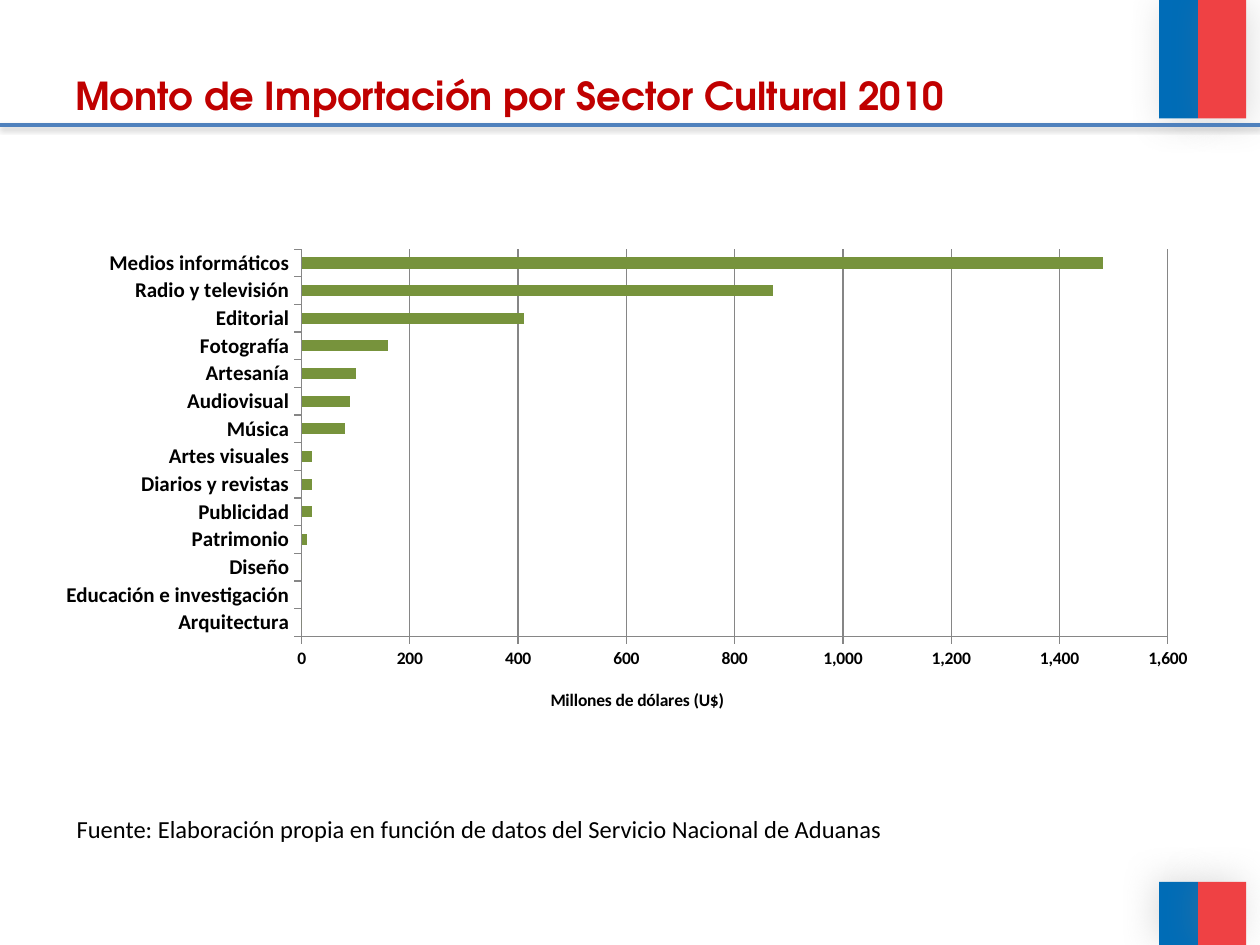
"""Build a slide with a bar chart of cultural imports by sector."""
from dataclasses import dataclass

from pptx import Presentation
from pptx import util as u
from pptx.chart import data as cd
from pptx.dml.color import RGBColor
from pptx.enum import chart as ch, shapes, text
from pptx.oxml import parse_xml
from pptx.oxml.ns import nsdecls, qn

HUES = {"blue": "006CB7", "red": "EF4144", "rule": "4F81BD", "title": "C00000",
        "text": "000000", "bar": "77933C", "grid": "868686", "shade": "808080"}
SANS = "Calibri"

SECTORS = {
    "Arquitectura": 0, "Educación e investigación": 0, "Diseño": 0,
    "Patrimonio": 10, "Publicidad": 20, "Diarios y revistas": 20,
    "Artes visuales": 20, "Música": 80, "Audiovisual": 90, "Artesanía": 100,
    "Fotografía": 160, "Editorial": 410, "Radio y televisión": 870,
    "Medios informáticos": 1480,
}


@dataclass
class Band:
    left: float
    top: float
    width: float
    height: float
    hue: str
    angle: int


@dataclass
class Label:
    left: float
    top: float
    width: float
    height: float
    words: str
    size: int
    face: str
    hue: str
    bold: bool = False
    indent: float = 0


BANDS = [Band(left, top, width, height, hue, angle)
         for top, height, angle in ((0, 67.7, 45), (504, 36, 215))
         for left, width, hue in ((662.4, 22.3, "blue"), (684.7, 27.4, "red"))]

LABELS = [
    Label(0, 37.4, 617.8, 33.8, "Monto de Importación por Sector Cultural 2010",
          22, "TeX Gyre Adventor", "title", True, 36),
    Label(36.7, 461.5, 584, 24.5,
          "Fuente: Elaboración propia en función de datos del Servicio Nacional de Aduanas",
          14, SANS, "text"),
]


def tint(hue: str) -> RGBColor:
    """Return a named colour."""
    return RGBColor.from_string(HUES[hue])


def shade(item, alpha: int, blur: float, dist: float, angle: int) -> None:
    """Give a shape or line a soft outer shadow."""
    item._element.spPr.append(parse_xml(
        f'<a:effectLst {nsdecls("a")}><a:outerShdw blurRad="{u.Pt(blur)}" '
        f'dist="{u.Pt(dist)}" dir="{angle * 60000}" algn="ctr" rotWithShape="0">'
        f'<a:srgbClr val="{HUES["shade"]}"><a:alpha val="{alpha * 1000}"/></a:srgbClr>'
        '</a:outerShdw></a:effectLst>'))


def draw_band(slide, band: Band) -> None:
    """Draw one flag band."""
    box = slide.shapes.add_shape(
        shapes.MSO_SHAPE.RECTANGLE, u.Pt(band.left), u.Pt(band.top),
        u.Pt(band.width), u.Pt(band.height))
    box.fill.solid()
    box.fill.fore_color.rgb = tint(band.hue)
    box.line.fill.background()
    shade(box, 25, 20, 3, band.angle)


def draw_rule(slide, top: float) -> None:
    """Draw the line under the title."""
    rule = slide.shapes.add_connector(
        shapes.MSO_CONNECTOR.STRAIGHT, 0, u.Pt(top), u.Pt(720), u.Pt(top))
    rule.line.color.rgb = tint("rule")
    rule.line.width = u.Pt(2)
    shade(rule, 38, 3.1, 1.6, 90)


def style(font, size: int, hue: str = "text", bold: bool = False, face: str = SANS) -> None:
    """Set the look of a font."""
    font.size, font.bold, font.name = u.Pt(size), bold, face
    font.color.rgb = tint(hue)


def draw_label(slide, label: Label) -> None:
    """Draw one line of text."""
    box = slide.shapes.add_textbox(u.Pt(label.left), u.Pt(label.top),
                                   u.Pt(label.width), u.Pt(label.height))
    frame = box.text_frame
    frame.word_wrap = True
    frame.auto_size = text.MSO_AUTO_SIZE.SHAPE_TO_FIT_TEXT
    para = frame.paragraphs[0]
    para.text = label.words
    style(para.font, label.size, label.hue, label.bold, label.face)
    para._p.get_or_add_pPr().set("marL", str(u.Pt(label.indent)))


def place(part, index: int, inner: bool = False, **spots: float) -> None:
    """Fix the place of a chart part by fractions of the chart."""
    for old in part.findall(qn("c:layout")):
        part.remove(old)
    modes = '<c:layoutTarget val="inner"/>' if inner else ""
    modes += '<c:xMode val="edge"/><c:yMode val="edge"/>'
    rest = "".join(f'<c:{key} val="{val}"/>' for key, val in spots.items())
    part.insert(index, parse_xml(
        f'<c:layout {nsdecls("c")}><c:manualLayout>{modes}{rest}'
        '</c:manualLayout></c:layout>'))


def draw_chart(slide) -> None:
    """Draw the bar chart of sectors."""
    data = cd.CategoryChartData(number_format="#,##0")
    data.categories = list(SECTORS)
    data.add_series("Series 1", list(SECTORS.values()))
    chart = slide.shapes.add_chart(
        ch.XL_CHART_TYPE.BAR_CLUSTERED, u.Pt(25.2), u.Pt(136.8),
        u.Pt(668.9), u.Pt(280.1), data).chart
    chart.has_title = chart.has_legend = False
    style(chart.font, 10)

    plot = chart.plots[0]
    plot.gap_width = 150
    plot.vary_by_categories = False
    fill = plot.series[0].format.fill
    fill.solid()
    fill.fore_color.rgb = tint("bar")

    cats, vals = chart.category_axis, chart.value_axis
    for axis, size in ((cats, 12), (vals, 10)):
        style(axis.tick_labels.font, size, bold=True)
        axis.major_tick_mark = ch.XL_TICK_MARK.OUTSIDE
        axis.minor_tick_mark = ch.XL_TICK_MARK.NONE
        axis.format.line.color.rgb = tint("grid")
        axis.format.line.width = u.Pt(0.75)
    cats.has_major_gridlines = False
    vals.has_major_gridlines = True
    grid = vals.major_gridlines.format.line
    grid.color.rgb = tint("grid")
    grid.width = u.Pt(0.75)
    vals.minimum_scale, vals.maximum_scale, vals.major_unit = 0, 1600, 200
    vals.tick_labels.number_format = "#,##0"
    vals.tick_labels.number_format_is_linked = False

    title = vals.axis_title
    para = title.text_frame.paragraphs[0]
    para.text = "Millones de dólares (U$)"
    style(para.font, 10, bold=True)
    place(title._element, 1, x=0.43, y=0.91)
    area = chart._chartSpace.chart.plotArea
    place(area, 0, inner=True, x=0.22, y=0.02, w=0.74, h=0.79)


def main() -> None:
    """Build and save the slide."""
    deck = Presentation()
    deck.slide_width, deck.slide_height = u.Pt(720), u.Pt(540)
    slide = deck.slides.add_slide(deck.slide_layouts[6])
    for band in BANDS:
        draw_band(slide, band)
    draw_rule(slide, 71.3)
    draw_label(slide, LABELS[0])
    draw_chart(slide)
    draw_label(slide, LABELS[1])
    deck.save("out.pptx")


if __name__ == "__main__":
    main()
